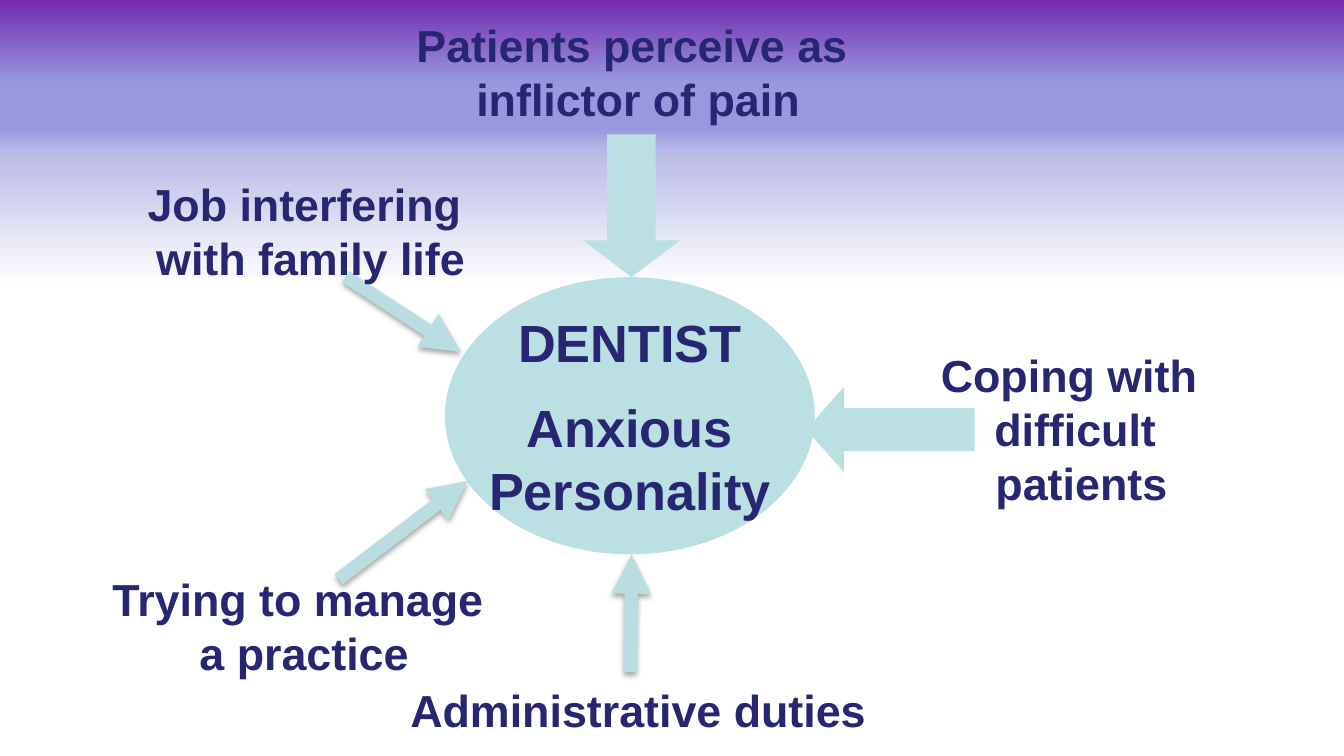
from lxml.etree import SubElement
from pptx import Presentation
from pptx.dml.color import RGBColor
from pptx.enum.shapes import MSO_CONNECTOR as CONN, MSO_SHAPE as SHAPE
from pptx.enum.text import MSO_ANCHOR as ANCHOR, PP_ALIGN as ALIGN
from pptx.oxml import parse_xml
from pptx.oxml.ns import nsdecls, qn
from pptx.util import Cm, Pt

COLORS = {"text": "262673", "shape": "BBE0E3", "line": "BADDE1", "shadow": "000000"}
BACKGROUND = [(0, "732AB0"), (11, "9898DD"), (17, "9898DD"), (20, "BABAE8"), (38, "FFFFFF")]
CENTER = ["DENTIST", "Anxious", "Personality"]
CENTER_BOX = (8.41, 5.24, 6.99, 5.24)
BLOCK_ARROWS = [
    (SHAPE.DOWN_ARROW, (11.02, 2.54, 1.83, 2.7), (0.5, 0.38)),
    (SHAPE.LEFT_ARROW, (15.24, 7.31, 3.18, 1.62), (0.5, 0.44)),
]
LINE_ARROWS = [
    (11.91, 12.7, 11.94, 10.48),
    (6.4, 10.95, 8.84, 9.09),
    (6.53, 5.23, 8.71, 6.65),
]
STRESSOR_WIDTH = 9.6
STRESSORS = [
    (["Trying to manage", " a practice"], (5.63, 10.95, 1.75)),
    (["Job interfering ", "with family life"], (5.87, 3.49, 1.75)),
    (["Patients perceive as ", "inflictor of pain"], (12.06, 0.48, 1.75)),
    (["Coping with ", "difficult", " patients"], (20.32, 6.51, 3.18)),
    (["Administrative duties"], (12.06, 12.54, 1.75)),
]


def rgb(name):
    return RGBColor.from_string(COLORS[name])


def set_background(slide):
    stops = "".join(
        f'<a:gs pos="{pos * 1000}"><a:srgbClr val="{color}"/></a:gs>' for pos, color in BACKGROUND
    )
    slide.background.fill.solid()
    bg = slide.background.fill._xPr
    bg.replace(bg.find(qn("a:solidFill")), parse_xml(
        f'<a:gradFill {nsdecls("a")} rotWithShape="1"><a:gsLst>{stops}</a:gsLst>'
        '<a:lin ang="5400000" scaled="0"/></a:gradFill>'
    ))


def write(sp, lines, size, wrap):
    tf = sp.text_frame
    tf.text = "\n".join(lines)
    tf.word_wrap = wrap
    tf.vertical_anchor = ANCHOR.MIDDLE
    for p in tf.paragraphs:
        p.alignment = ALIGN.CENTER
        font = p.runs[0].font
        font.name, font.size, font.bold = "Arial", Pt(size), True
        font.color.rgb = rgb("text")


def add_solid(slide, kind, box):
    sp = slide.shapes.add_shape(kind, *map(Cm, box))
    sp.shadow.inherit = False
    sp.fill.solid()
    sp.fill.fore_color.rgb = rgb("shape")
    sp.line.fill.background()
    return sp


def add_line_arrow(slide, ends):
    line = slide.shapes.add_connector(CONN.STRAIGHT, *map(Cm, ends))
    line.line.width = Pt(7)
    line.line.color.rgb = rgb("line")
    SubElement(line.line._get_or_add_ln(), qn("a:tailEnd"), type="triangle")
    line._element.spPr.append(parse_xml(
        f'<a:effectLst {nsdecls("a")}><a:outerShdw blurRad="{Pt(3.1)}" dist="{Pt(1.8)}" '
        f'dir="5400000" rotWithShape="0"><a:srgbClr val="{COLORS["shadow"]}">'
        '<a:alpha val="35000"/></a:srgbClr></a:outerShdw></a:effectLst>'
    ))


def main():
    """Build the slide of pressures acting on a dentist."""
    prs = Presentation()
    prs.slide_width, prs.slide_height = Cm(25.4), Cm(14.29)
    s = prs.slides.add_slide(prs.slide_layouts[6])
    set_background(s)

    dentist = add_solid(s, SHAPE.OVAL, CENTER_BOX)
    write(dentist, CENTER, 28, wrap=False)
    dentist.text_frame.paragraphs[0].space_after = Pt(12)

    for kind, box, adjustments in BLOCK_ARROWS:
        arrow = add_solid(s, kind, box)
        for i, value in enumerate(adjustments):
            arrow.adjustments[i] = value
    for ends in LINE_ARROWS:
        add_line_arrow(s, ends)
    for lines, (middle, top, height) in STRESSORS:
        box = (middle - STRESSOR_WIDTH / 2, top, STRESSOR_WIDTH, height)
        write(s.shapes.add_textbox(*map(Cm, box)), lines, 24, wrap=True)

    prs.save("out.pptx")


if __name__ == "__main__":
    main()
